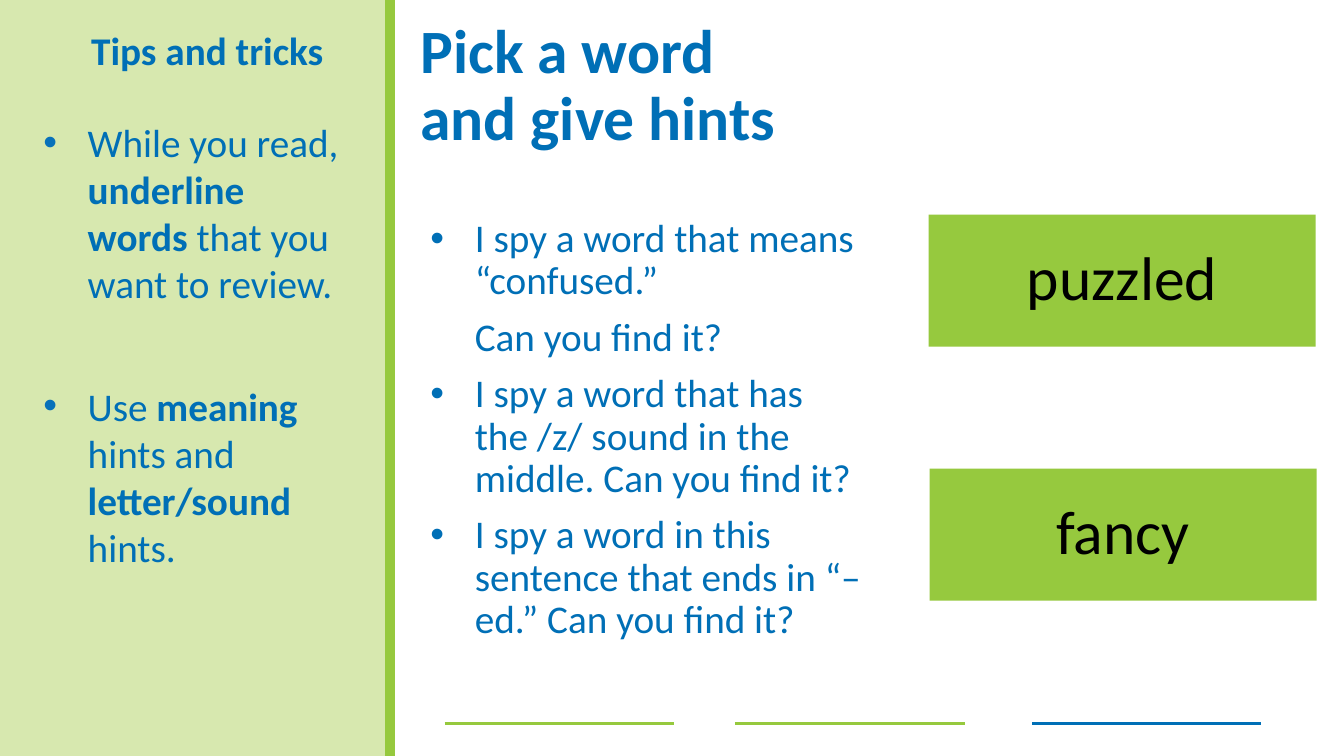
import dataclasses

import pptx
import pptx.dml.color
import pptx.enum.shapes
import pptx.enum.text
import pptx.oxml.ns
import pptx.util
from lxml import etree

Inches = pptx.util.Inches
Pt = pptx.util.Pt
Align = pptx.enum.text.PP_ALIGN
Anchor = pptx.enum.text.MSO_ANCHOR
qn = pptx.oxml.ns.qn


@dataclasses.dataclass(frozen=True)
class Theme:
    font: str = "Calibri"
    blue: str = "006FB6"
    bullet_blue: str = "0771BA"
    green: str = "96C93E"
    pale_green: str = "D7E8AF"
    black: str = "000000"
    large: int = 44
    medium: int = 28


theme = Theme()
rgb = pptx.dml.color.RGBColor.from_string


def write_text(shape, texts, *, size=theme.medium, color=theme.blue, bold=False,
               align=Align.LEFT, anchor=Anchor.TOP, margin_left=0.1, indent=(0, 0),
               line_spacing=0.9, space_before=0, bullet_color=None, unbulleted=()):
    """Fill the shape with one paragraph per text; **words** between stars are bold."""
    frame = shape.text_frame
    frame.word_wrap = True
    frame.auto_size = pptx.enum.text.MSO_AUTO_SIZE.NONE
    frame.vertical_anchor = anchor
    frame.margin_left, frame.margin_right = Inches(margin_left), Inches(0.1)
    frame.margin_top = frame.margin_bottom = Inches(0.05)
    for number, text in enumerate(texts):
        paragraph = frame.add_paragraph() if number else frame.paragraphs[0]
        bulleted = bullet_color and number not in unbulleted
        left, first_line = indent
        if bullet_color and not bulleted:
            first_line = 0
        properties = paragraph._p.get_or_add_pPr()
        properties.set("marL", str(Inches(left)))
        properties.set("indent", str(Inches(first_line)))
        if bulleted:
            color_element = etree.SubElement(properties, qn("a:buClr"))
            etree.SubElement(color_element, qn("a:srgbClr"), val=bullet_color)
            etree.SubElement(properties, qn("a:buFont"), typeface="Arial")
            etree.SubElement(properties, qn("a:buChar"), char="•")
        else:
            etree.SubElement(properties, qn("a:buNone"))
        paragraph.alignment = align
        paragraph.line_spacing = line_spacing
        paragraph.space_before = Pt(space_before if number else 0)
        paragraph.space_after = Pt(0)
        for part, words in enumerate(text.split("**")):
            if words:
                run = paragraph.add_run()
                run.text = words
                run.font.name = theme.font
                run.font.size = Pt(size)
                run.font.bold = bold or part % 2 == 1
                run.font.color.rgb = rgb(color)


def add_box(left, top, width, height, color):
    box = slide.shapes.add_shape(pptx.enum.shapes.MSO_SHAPE.RECTANGLE, Inches(left),
                                 Inches(top), Inches(width), Inches(height))
    box.shadow.inherit = False
    box.fill.solid()
    box.fill.fore_color.rgb = rgb(color)
    box.line.fill.background()
    return box


presentation = pptx.Presentation()
presentation.slide_width = Inches(13.33)
presentation.slide_height = Inches(7.5)
comparison_layout = presentation.slide_layouts[4]
slide = presentation.slides.add_slide(comparison_layout)

# Sidebar and rules
add_box(0, 0, 3.87, 7.5, theme.pale_green)
rules = [
    (3.87, 0, 3.87, 7.5, theme.green, 7),
    (4.41, 7.18, 6.68, 7.18, theme.green, 2),
    (7.29, 7.18, 9.57, 7.18, theme.green, 2),
    (10.24, 7.18, 12.51, 7.18, theme.blue, 2),
]
for *ends, color, width in rules:
    rule = slide.shapes.add_connector(pptx.enum.shapes.MSO_CONNECTOR.STRAIGHT,
                                      *[Inches(value) for value in ends])
    rule.line.color.rgb = rgb(color)
    rule.line.width = Pt(width)
    etree.SubElement(rule._element.spPr, qn("a:effectLst"))

# Title and lists, brought in front of the sidebar
title, tips_heading, tips, spare, hints = slide.placeholders
spare.element.getparent().remove(spare.element)
places = [
    (title, 3.87, 0, 6.22, 1.73),
    (tips_heading, 0.27, 0.26, 3.32, 0.6),
    (tips, 0.27, 1.12, 3.32, 3.27),
    (hints, 4.11, 2.12, 4.77, 4.54),
]
for placeholder, left, top, width, height in places:
    placeholder.left, placeholder.top = Inches(left), Inches(top)
    placeholder.width, placeholder.height = Inches(width), Inches(height)
    placeholder.element.getparent().append(placeholder.element)

write_text(title, ["Pick a word", "and give hints"], size=theme.large, bold=True,
           anchor=Anchor.MIDDLE, margin_left=0.3)
write_text(tips_heading, ["Tips and tricks"], bold=True, align=Align.CENTER,
           indent=(0.5, -0.25))
write_text(tips, [
    "While you read, **underline words **that you want to review.",
    "Use **meaning** hints and **letter/sound **hints.",
], indent=(0.5, -0.44), line_spacing=1, space_before=54, bullet_color=theme.bullet_blue)
write_text(hints, [
    "I spy a word that means “confused.”",
    "Can you find it?",
    "I spy a word that has the /z/ sound in the middle. Can you find it?",
    "I spy a word in this sentence that ends in “–ed.” Can you find it?",
], indent=(0.5, -0.44), space_before=10, bullet_color=theme.blue, unbulleted={1})

# Answer cards
for word, left, top in [("puzzled", 9.21, 2.13), ("fancy", 9.22, 4.65)]:
    card = add_box(left, top, 3.84, 1.31, theme.green)
    write_text(card, [word], size=theme.large, color=theme.black, align=Align.CENTER,
               anchor=Anchor.MIDDLE)

presentation.save("out.pptx")
